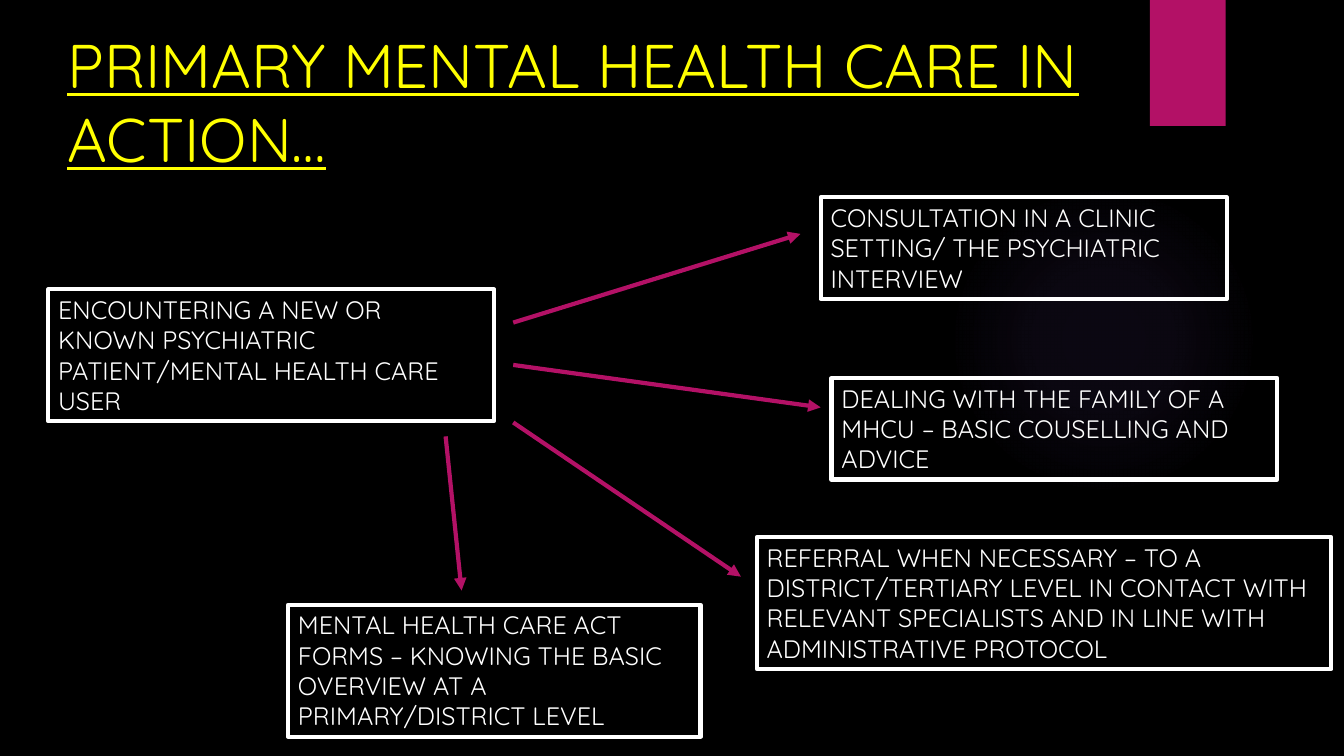
from typing import NamedTuple

from lxml import etree
from pptx import Presentation
from pptx import util as u
from pptx.dml.color import RGBColor
from pptx.enum import shapes, text
from pptx.oxml import ns, parse_xml

COLS, ROWS = 32, 18
FONT = "Quicksand"
LINE_WIDTH = u.Pt(3)
COLORS = {
    "background": "000000",
    "title": "FFFF00",
    "text": "FFFFFF",
    "accent": "B31166",
    "glow": "9B6BF2",
}
GLOW_STOPS = ((0, 7), (36, 6), (69, 0))  # position and opacity, in percent


class Area(NamedTuple):
    """Left, top, width and height in grid columns and rows."""
    col: float
    row: float
    cols: float
    rows: float


class Box(NamedTuple):
    area: Area
    lines: tuple[str, ...]


class Arrow(NamedTuple):
    """Start and end points in grid columns and rows."""
    col1: float
    row1: float
    col2: float
    row2: float


TITLE = Box(Area(1.37, 0.53, 28.27, 2.02),
            ("PRIMARY MENTAL HEALTH CARE IN ACTION…",))
BOXES = (
    Box(Area(1.15, 6.89, 10.61, 3.14),
        ("ENCOUNTERING A NEW OR KNOWN PSYCHIATRIC PATIENT/MENTAL HEALTH CARE USER",)),
    Box(Area(19.54, 4.7, 9.67, 2.42),
        ("CONSULTATION IN A CLINIC SETTING/ THE PSYCHIATRIC", "INTERVIEW")),
    Box(Area(19.8, 9, 10.61, 2.42),
        ("DEALING WITH THE FAMILY OF A MHCU – BASIC COUSELLING AND", "ADVICE")),
    Box(Area(18.02, 12.79, 13.68, 3.14),
        ("REFERRAL WHEN NECESSARY – TO A DISTRICT/TERTIARY LEVEL IN CONTACT WITH "
         "RELEVANT SPECIALISTS AND IN LINE WITH ADMINISTRATIVE PROTOCOL",)),
    Box(Area(6.86, 14.4, 9.82, 3.14),
        ("MENTAL HEALTH CARE ACT FORMS – KNOWING THE BASIC OVERVIEW AT A "
         "PRIMARY/DISTRICT LEVEL",)),
)
ARROWS = (
    Arrow(12.22, 7.68, 19.06, 5.57),
    Arrow(12.22, 8.69, 19.54, 9.7),
    Arrow(12.22, 10.06, 17.64, 13.73),
    Arrow(10.61, 10.39, 10.99, 14.06),
)

prs = Presentation()
prs.slide_width, prs.slide_height = u.Inches(13.33), u.Inches(7.5)
s = prs.slides.add_slide(prs.slide_layouts[6])


def rgb(name: str) -> RGBColor:
    return RGBColor.from_string(COLORS[name])


def place(values: tuple[float, ...]) -> list[int]:
    """Turn alternating columns and rows into slide lengths."""
    units = (prs.slide_width / COLS, prs.slide_height / ROWS)
    return [round(v * units[i % 2]) for i, v in enumerate(values)]


def add_plain(kind: shapes.MSO_SHAPE, area: Area, color: str):
    sp = s.shapes.add_shape(kind, *place(area))
    sp.shadow.inherit = False
    sp.line.fill.background()
    sp.fill.solid()
    sp.fill.fore_color.rgb = rgb(color)
    return sp


def add_glow(area: Area) -> None:
    sp = add_plain(shapes.MSO_SHAPE.OVAL, area, "glow")
    stops = "".join(
        f'<a:gs pos="{pos * 1000}"><a:srgbClr val="{COLORS["glow"]}">'
        f'<a:alpha val="{alpha * 1000}"/></a:srgbClr></a:gs>'
        for pos, alpha in GLOW_STOPS)
    gradient = parse_xml(
        f'<a:gradFill {ns.nsdecls("a")}><a:gsLst>{stops}</a:gsLst><a:path path="circle">'
        '<a:fillToRect l="50000" t="50000" r="50000" b="50000"/></a:path></a:gradFill>')
    props = sp.element.spPr
    props.replace(props.find(ns.qn("a:solidFill")), gradient)


def add_text(box: Box, size: int, color: str, underline: bool = False):
    sp = s.shapes.add_textbox(*place(box.area))
    tf = sp.text_frame
    tf.word_wrap = True
    tf.auto_size = text.MSO_AUTO_SIZE.SHAPE_TO_FIT_TEXT
    for i, line in enumerate(box.lines):
        p = tf.add_paragraph() if i else tf.paragraphs[0]
        r = p.add_run()
        r.text = line
        r.font.name, r.font.size = FONT, u.Pt(size)
        r.font.color.rgb = rgb(color)
        if underline:
            r.font.underline = True
    return sp


def add_arrow(arrow: Arrow) -> None:
    cxn = s.shapes.add_connector(shapes.MSO_CONNECTOR.STRAIGHT, *place(arrow))
    cxn.line.width = LINE_WIDTH
    cxn.line.color.rgb = rgb("accent")
    etree.SubElement(cxn.line._get_or_add_ln(), ns.qn("a:tailEnd"), type="triangle")
    etree.SubElement(cxn._element.spPr, ns.qn("a:effectLst"))


# Background and decoration
s.background.fill.solid()
s.background.fill.fore_color.rgb = rgb("background")
add_glow(Area(22.58, 4.39, 7.39, 7.39))
add_plain(shapes.MSO_SHAPE.RECTANGLE, Area(27.38, 0, 1.8, 3), "accent")

# Title
add_text(TITLE, 44, "title", underline=True)

# Arrows from the encounter to each step
for arrow in ARROWS:
    add_arrow(arrow)

# Framed steps
for box in BOXES:
    frame = add_text(box, 18, "text")
    frame.line.width = LINE_WIDTH
    frame.line.color.rgb = rgb("text")

prs.save("out.pptx")
